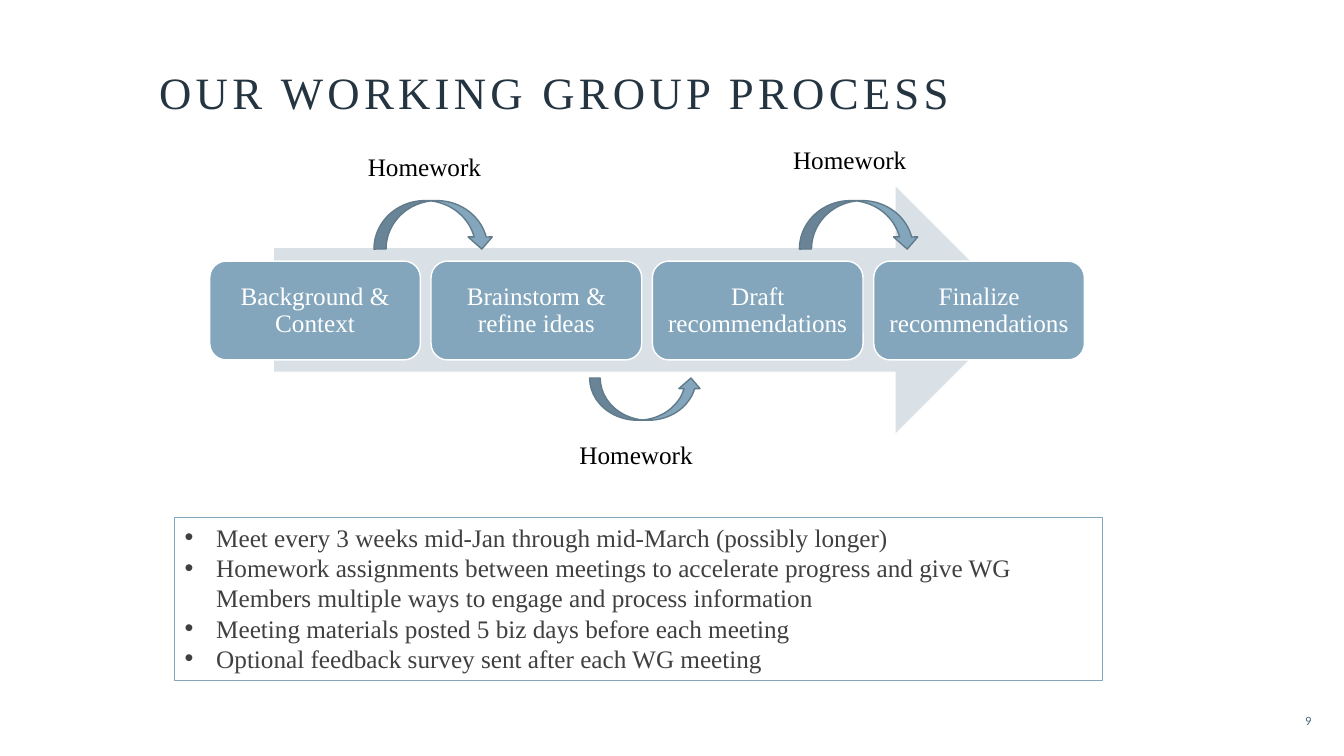
from lxml import etree
from pptx import Presentation
from pptx import util as u
from pptx.dml.color import RGBColor
from pptx.enum import shapes, text
from pptx.oxml import ns

NAVY = RGBColor(0x24, 0x35, 0x41)
STEEL = RGBColor(0x83, 0xA6, 0xBC)
SLATE = RGBColor(0x61, 0x7B, 0x8B)
PALE = RGBColor(0xD9, 0xE1, 0xE7)
TEAL = RGBColor(0x48, 0x6B, 0x83)
GREY = RGBColor(0x40, 0x40, 0x40)
WHITE = RGBColor(0xFF, 0xFF, 0xFF)
BLACK = RGBColor(0, 0, 0)
SERIF = "Times New Roman"
Kind = shapes.MSO_SHAPE
Align = text.PP_ALIGN
Anchor = text.MSO_ANCHOR

deck = Presentation()
deck.slide_width, deck.slide_height = u.Pt(960), u.Pt(540)
page = deck.slides.add_slide(deck.slide_layouts[6])


def add_block(kind, place, fill, line, weight=1):
    block = page.shapes.add_shape(kind, *map(u.Pt, place))
    block.shadow.inherit = False
    if fill is None:
        block.fill.background()
    else:
        block.fill.solid()
        block.fill.fore_color.rgb = fill
    if line is None:
        block.line.fill.background()
    else:
        block.line.color.rgb = line
        block.line.width = u.Pt(weight)
    return block


def write(box, words, size, color, font=SERIF, align=Align.LEFT,
          anchor=Anchor.TOP, spacing=None, tracking=None):
    frame = box.text_frame
    frame.word_wrap = True
    frame.vertical_anchor = anchor
    frame.text = words
    for para in frame.paragraphs:
        para.alignment = align
        para.line_spacing = spacing
        for span in para.runs:
            span.font.size = u.Pt(size)
            span.font.name = font
            span.font.color.rgb = color
            if tracking:
                span.font._element.set("spc", str(tracking * 100))


title = page.shapes.add_textbox(*map(u.Pt, (106.6, 35.3, 747.4, 53.3)))
write(title, "OUR WORKING GROUP PROCESS", 32, NAVY,
      anchor=Anchor.BOTTOM, spacing=0.9, tracking=3)

number = page.shapes.add_textbox(*map(u.Pt, (875.5, 500.4, 68.4, 28.8)))
write(number, "9", 9, TEAL, font="Calibri", align=Align.RIGHT,
      anchor=Anchor.MIDDLE, tracking=3)

add_block(Kind.RIGHT_ARROW, (195.8, 133.2, 532.1, 176.4), PALE, None)

steps = ["Background & Context", "Brainstorm & refine ideas",
         "Draft recommendations", "Finalize recommendations"]
for index, step in enumerate(steps):
    card = add_block(Kind.ROUNDED_RECTANGLE,
                     (149.8 + index * 158.1, 186.5, 150.5, 70.6), STEEL, WHITE)
    frame = card.text_frame
    frame.margin_left = frame.margin_right = u.Pt(5)
    frame.margin_top = frame.margin_bottom = u.Pt(5)
    write(card, step, 18, WHITE, align=Align.CENTER,
          anchor=Anchor.MIDDLE, spacing=0.9)

homework = [
    (Kind.CURVED_DOWN_ARROW, (267.1, 143.3, 85.7, 34.6), (255.6, 104.4)),
    (Kind.CURVED_DOWN_ARROW, (571, 143.3, 85.7, 34.6), (559.4, 99.4)),
    (Kind.CURVED_UP_ARROW, (421.2, 270, 79.9, 30.2), (406.8, 310.3)),
]
for kind, place, corner in homework:
    add_block(kind, place, STEEL, SLATE)
    label = page.shapes.add_textbox(*map(u.Pt, (*corner, 109.4, 28.8)))
    write(label, "Homework", 18, BLACK)

notes = [
    "Meet every 3 weeks mid-Jan through mid-March (possibly longer)",
    "Homework assignments between meetings to accelerate progress and give WG "
    "Members multiple ways to engage and process information",
    "Meeting materials posted 5 biz days before each meeting",
    "Optional feedback survey sent after each WG meeting",
]
panel = add_block(Kind.RECTANGLE, (124.9, 369.4, 662.4, 116.6), None, STEEL, 0.75)
write(panel, "\n".join(notes), 18, GREY)
for para in panel.text_frame.paragraphs:
    settings = para._p.get_or_add_pPr()
    settings.set("marL", str(u.Pt(22.5)))
    settings.set("indent", str(-u.Pt(22.5)))
    etree.SubElement(settings, ns.qn("a:buFont")).set("typeface", "Arial")
    etree.SubElement(settings, ns.qn("a:buChar")).set("char", "•")

deck.save("out.pptx")
